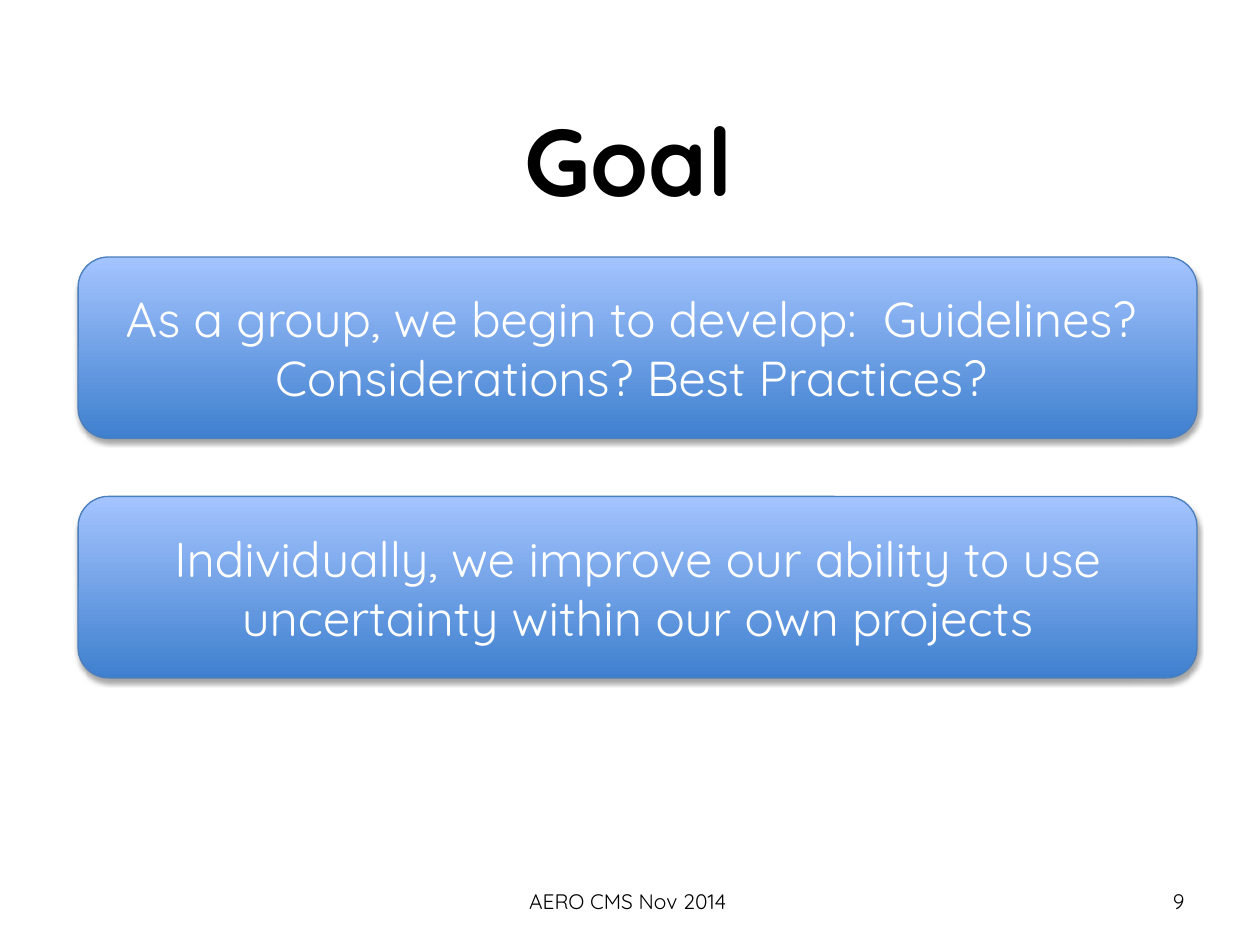
import pptx
import pptx.dml.color
import pptx.enum.shapes
import pptx.enum.text
import pptx.oxml
import pptx.oxml.ns
import pptx.util

PX = 9144  # EMU per px, 100 px to the inch
COLORS = {
    "text": "000000",
    "title_outline": "054697",
    "panel_bottom": "3F80CE",
    "panel_top": "A4C4FF",
    "panel_line": "4B7EBC",
    "panel_text": "FFFFFF",
    "shadow": "000000",
}
ALIGN = pptx.enum.text.PP_ALIGN
ANCHOR = pptx.enum.text.MSO_ANCHOR


def rgb(name):
    return pptx.dml.color.RGBColor.from_string(COLORS[name])


class SlideBuilder:
    """Holds the text style and the current slide."""

    font = "Quicksand"

    def __init__(self, slide):
        self.slide = slide

    def set_text(self, shape, text, size, color="text", align=ALIGN.CENTER,
                 anchor=ANCHOR.MIDDLE, bold=False):
        frame = shape.text_frame
        frame.word_wrap = True
        frame.vertical_anchor = anchor
        para = frame.paragraphs[0]
        para.alignment = align
        span = para.add_run()
        span.text = text
        formats = {"name": self.font, "size": pptx.util.Pt(size), "bold": bold}
        for key, value in formats.items():
            setattr(span.font, key, value)
        span.font.color.rgb = rgb(color)
        return span

    def label(self, bounds, text, size, **style):
        box = self.slide.shapes.add_textbox(*(n * PX for n in bounds))
        return box, self.set_text(box, text, size, **style)

    def title(self, bounds, text):
        box, span = self.label(bounds, text, 54, anchor=ANCHOR.TOP, bold=True)
        box.text_frame.auto_size = pptx.enum.text.MSO_AUTO_SIZE.SHAPE_TO_FIT_TEXT
        outline = pptx.oxml.parse_xml(
            f'<a:ln {pptx.oxml.ns.nsdecls("a")} w="12700"><a:solidFill>'
            f'<a:srgbClr val="{COLORS["title_outline"]}"/></a:solidFill></a:ln>')
        span.font._element.insert(0, outline)

    def panel(self, bounds, text):
        shape = self.slide.shapes.add_shape(
            pptx.enum.shapes.MSO_SHAPE.ROUNDED_RECTANGLE, *(n * PX for n in bounds))
        shape.fill.gradient()
        shape.fill.gradient_angle = 90
        for stop, name in zip(shape.fill.gradient_stops, ("panel_bottom", "panel_top")):
            stop.color.rgb = rgb(name)
        shape.line.color.rgb = rgb("panel_line")
        shape.line.width = pptx.util.Pt(0.75)
        self.shadow(shape)
        self.set_text(shape, text, 28, color="panel_text")

    def shadow(self, shape):
        shape.shadow.inherit = False
        effects = shape._element.spPr.find(pptx.oxml.ns.qn("a:effectLst"))
        effects.append(pptx.oxml.parse_xml(
            f'<a:outerShdw {pptx.oxml.ns.nsdecls("a")} blurRad="{pptx.util.Pt(3.1)}" '
            f'dist="{pptx.util.Pt(1.8)}" dir="5400000" rotWithShape="0">'
            f'<a:srgbClr val="{COLORS["shadow"]}"><a:alpha val="35000"/></a:srgbClr>'
            '</a:outerShdw>'))


def main():
    deck = pptx.Presentation()
    deck.slide_width, deck.slide_height = 1000 * PX, 750 * PX
    page = SlideBuilder(deck.slides.add_slide(deck.slide_layouts[6]))

    # Footer and page number
    page.label((342, 695, 317, 40), "AERO CMS Nov 2014 ", 12)
    page.label((717, 695, 233, 40), "9", 12, align=ALIGN.RIGHT)

    # Title
    page.title((81, 76, 836, 101), "Goal")

    # Goal panels
    goals = (
        "As a group, we begin to develop:  Guidelines?  Considerations? Best Practices? ",
        "Individually, we improve our ability to use uncertainty within our own projects",
    )
    for row, goal in enumerate(goals):
        page.panel((62, 204 + 190 * row, 888, 144), goal)

    deck.save("out.pptx")


if __name__ == "__main__":
    main()
